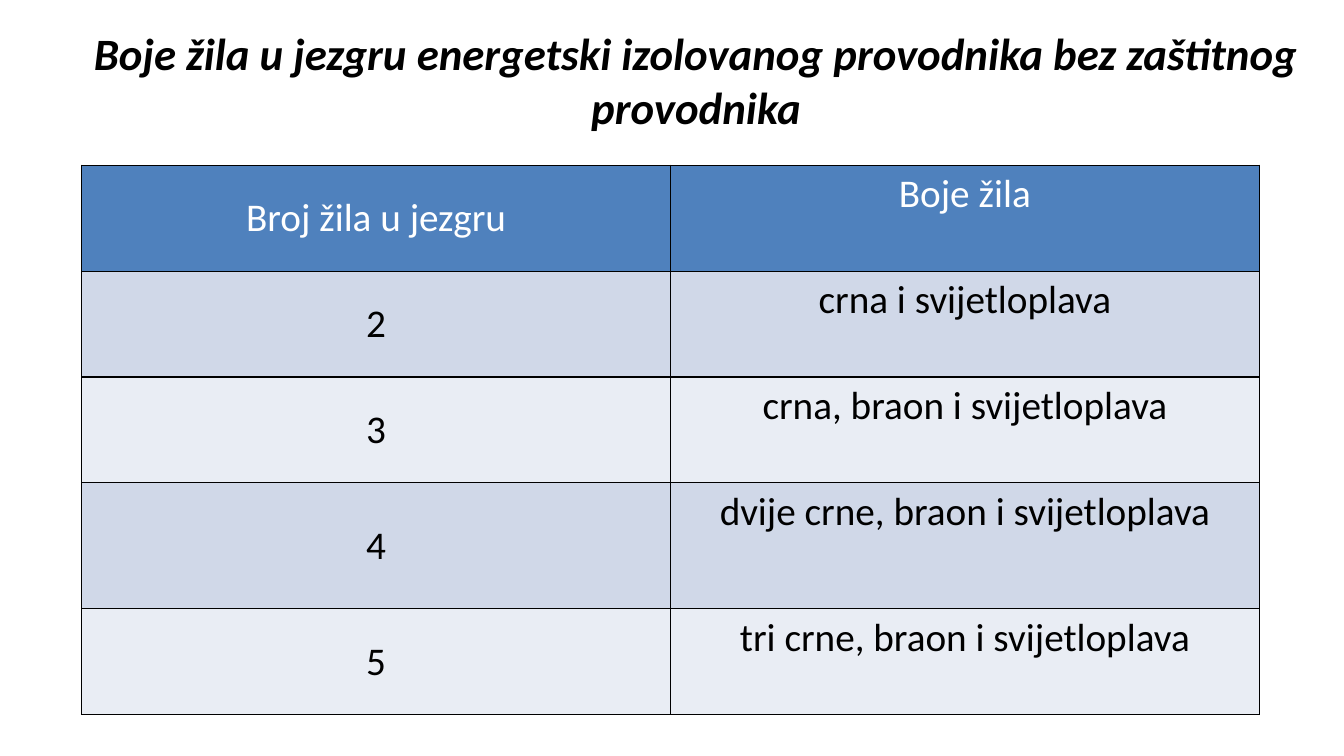
"""Build the slide on core colours of insulated power conductors."""
import lxml.etree
import pptx
import pptx.dml.color
import pptx.enum.text
import pptx.oxml.ns
import pptx.util

Inches = pptx.util.Inches
Pt = pptx.util.Pt
RGBColor = pptx.dml.color.RGBColor
Anchor = pptx.enum.text.MSO_ANCHOR

THEME = {
    "font": "Calibri",
    "heading_size": Pt(32),
    "table_size": Pt(28),
    "ink": RGBColor.from_string("000000"),
    "header_ink": RGBColor.from_string("FFFFFF"),
    "header_fill": RGBColor.from_string("4F81BD"),
    "band_fills": [RGBColor.from_string("E9EDF4"), RGBColor.from_string("D0D8E8")],
    "border": "000000",
    "border_width": Pt(1),
}
CORE_COLOURS = [
    ("Broj žila u jezgru", "Boje žila"),
    ("2", "crna i svijetloplava"),
    ("3", "crna, braon i svijetloplava"),
    ("4", "dvije crne, braon i svijetloplava"),
    ("5", "tri crne, braon i svijetloplava"),
]
ROW_HEIGHTS = [1.05, 1.05, 1.05, 1.25, 1.05]
COLUMN_WIDTH = 5.84


def write_centred(frame, wording, colour, font_format):
    paragraph = frame.paragraphs[0]
    paragraph.alignment = pptx.enum.text.PP_ALIGN.CENTER
    run = paragraph.add_run()
    run.text = wording
    for attribute, value in font_format.items():
        setattr(run.font, attribute, value)
    run.font.color.rgb = colour


def draw_borders(cell):
    properties = cell._tc.get_or_add_tcPr()
    for side in ("lnL", "lnR", "lnT", "lnB"):
        line = lxml.etree.SubElement(
            properties, pptx.oxml.ns.qn(f"a:{side}"), w=str(THEME["border_width"])
        )
        fill = lxml.etree.SubElement(line, pptx.oxml.ns.qn("a:solidFill"))
        lxml.etree.SubElement(fill, pptx.oxml.ns.qn("a:srgbClr"), val=THEME["border"])


presentation = pptx.Presentation()
presentation.slide_width = Inches(13.33)
presentation.slide_height = Inches(7.5)
slide = presentation.slides.add_slide(presentation.slide_layouts[6])

core_table = slide.shapes.add_table(
    len(CORE_COLOURS), 2,
    Inches(0.81), Inches(1.64), Inches(2 * COLUMN_WIDTH), Inches(sum(ROW_HEIGHTS)),
).table
for flag, value in {"first_row": False, "horz_banding": False}.items():
    setattr(core_table, flag, value)
for column in core_table.columns:
    column.width = Inches(COLUMN_WIDTH)

table_font = {"name": THEME["font"], "size": THEME["table_size"], "bold": False}
for row_index, (wordings, height) in enumerate(zip(CORE_COLOURS, ROW_HEIGHTS)):
    core_table.rows[row_index].height = Inches(height)
    is_header = row_index == 0
    row_fill = THEME["header_fill"] if is_header else THEME["band_fills"][row_index % 2]
    row_ink = THEME["header_ink"] if is_header else THEME["ink"]
    for column_index, wording in enumerate(wordings):
        cell = core_table.cell(row_index, column_index)
        cell.vertical_anchor = Anchor.TOP if column_index else Anchor.MIDDLE
        draw_borders(cell)
        cell.fill.solid()
        cell.fill.fore_color.rgb = row_fill
        write_centred(cell.text_frame, wording, row_ink, table_font)

heading = slide.shapes.add_textbox(
    Inches(0.48), Inches(0.21), Inches(12.85), Inches(1.18)
).text_frame
heading.word_wrap = True
heading_font = {
    "name": THEME["font"], "size": THEME["heading_size"], "bold": True, "italic": True,
}
write_centred(
    heading,
    "Boje žila u jezgru energetski izolovanog provodnika bez zaštitnog provodnika",
    THEME["ink"],
    heading_font,
)

presentation.save("out.pptx")
